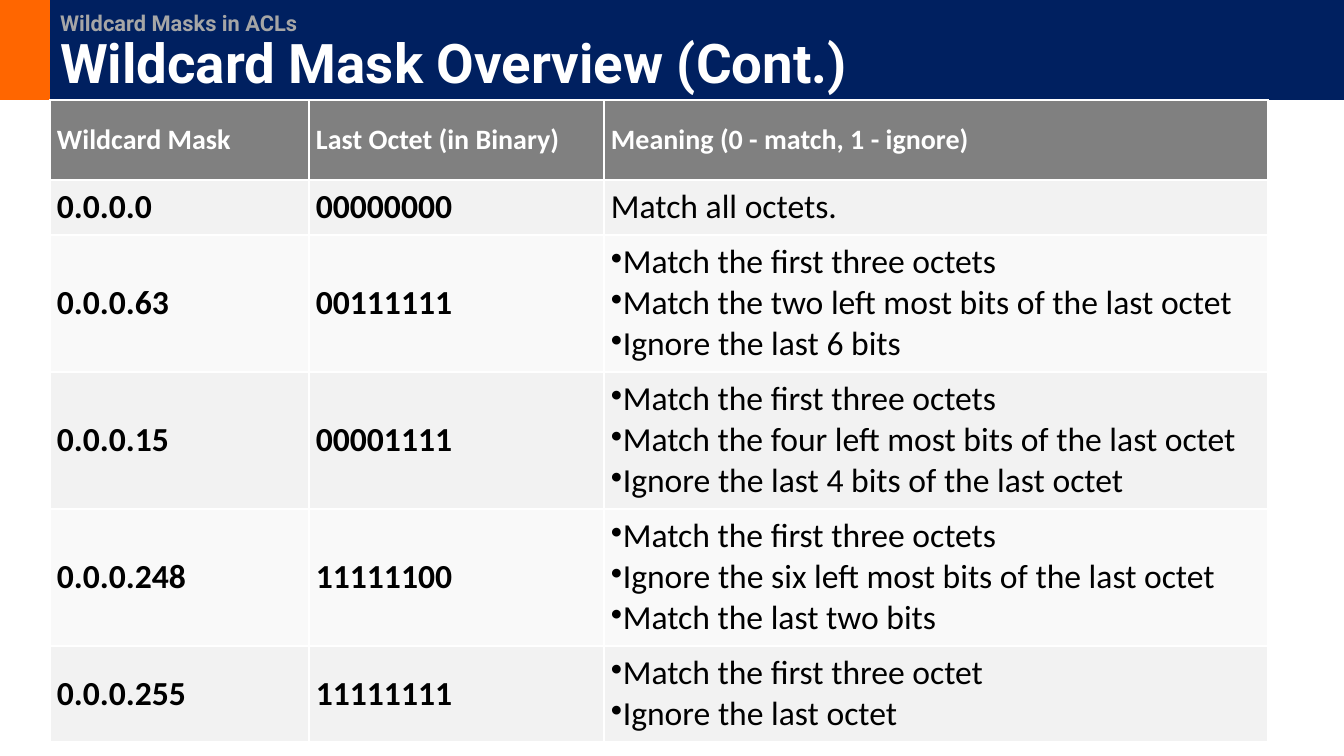
from lxml import etree
from pptx import Presentation
from pptx.dml.color import RGBColor
from pptx.enum.shapes import MSO_SHAPE as Shape
from pptx.enum.text import MSO_ANCHOR as Anchor, MSO_AUTO_SIZE as AutoSize, PP_ALIGN as Align
from pptx.oxml.ns import qn
from pptx.util import Pt

EMU_PER_PX = 914400 / 100.8
COLORS = {
    "orange": "FF6600", "navy": "002060", "topic": "A6A6A6", "white": "FFFFFF",
    "header": "808080", "odd": "F2F2F2", "even": "F9F9F9", "black": "000000",
}
HEADINGS = ["Wildcard Mask", "Last Octet (in Binary)", "Meaning (0 - match, 1 - ignore)"]
MASKS = [
    ("0.0.0.0", "00000000", ["Match all octets."]),
    ("0.0.0.63", "00111111", ["Match the first three octets",
                              "Match the two left most bits of the last octet",
                              "Ignore the last 6 bits"]),
    ("0.0.0.15", "00001111", ["Match the first three octets",
                              "Match the four left most bits of the last octet",
                              "Ignore the last 4 bits of the last octet"]),
    ("0.0.0.248", "11111100", ["Match the first three octets",
                               "Ignore the six left most bits of the last octet",
                               "Match the last two bits"]),
    ("0.0.0.255", "11111111", ["Match the first three octet", "Ignore the last octet"]),
]
COLUMN_WIDTHS = [259, 295, 664]
ROW_HEIGHTS = [80, 55, 137, 137, 137, 96]


def px(length):
    return round(length * EMU_PER_PX)


def style_font(font, name, size, color, bold=True):
    font.name = name
    font.size = Pt(size)
    font.bold = bold
    font.color.rgb = RGBColor.from_string(COLORS[color])


deck = Presentation()
deck.slide_width, deck.slide_height = px(1344), px(756)
page = deck.slides.add_slide(deck.slide_layouts[5])

# Header band
bar = page.shapes.add_shape(Shape.RECTANGLE, 0, 0, px(50), px(100))
bar.shadow.inherit = False
bar.fill.solid()
bar.fill.fore_color.rgb = RGBColor.from_string(COLORS["orange"])
bar.line.fill.background()

title = page.shapes.title
title.left, title.top, title.width, title.height = px(50), 0, px(1294), px(100)
title.fill.solid()
title.fill.fore_color.rgb = RGBColor.from_string(COLORS["navy"])
frame = title.text_frame
frame.auto_size = AutoSize.NONE
frame.word_wrap = True
frame.vertical_anchor = Anchor.BOTTOM
para = frame.paragraphs[0]
para.alignment = Align.LEFT
para.line_spacing = 0.9
style_font(para.font, "Roboto", 15.6, "topic")
topic = para.add_run()
topic.text = "Wildcard Masks in ACLs"
style_font(topic.font, "Roboto", 15.6, "topic")
para.add_line_break()
heading = para.add_run()
heading.text = "Wildcard Mask Overview (Cont.)"
style_font(heading.font, "Roboto", 39, "white")

# Mask table
rows = [[[text] for text in HEADINGS]]
rows += [[[mask], [octet], meaning] for mask, octet, meaning in MASKS]
table = page.shapes.add_table(len(rows), len(HEADINGS), px(50), px(100),
                              px(sum(COLUMN_WIDTHS)), px(sum(ROW_HEIGHTS))).table
for column, width in zip(table.columns, COLUMN_WIDTHS):
    column.width = px(width)
for row, height in zip(table.rows, ROW_HEIGHTS):
    row.height = px(height)

for r, row in enumerate(rows):
    fill = "header" if r == 0 else "odd" if r % 2 else "even"
    size, color = (20, "white") if r == 0 else (24, "black")
    for c, lines in enumerate(row):
        cell = table.cell(r, c)
        cell.fill.solid()
        cell.fill.fore_color.rgb = RGBColor.from_string(COLORS[fill])
        cell.vertical_anchor = Anchor.MIDDLE
        cell.margin_left = cell.margin_right = cell.margin_top = cell.margin_bottom = px(7)
        cell.text_frame.text = "\n".join(lines)
        for para in cell.text_frame.paragraphs:
            style_font(para.font, "Calibri", size, color, bold=r == 0 or c < 2)
            if len(lines) > 1:
                properties = para._p.get_or_add_pPr()
                properties.set("marL", "0")
                properties.set("indent", "0")
                bullet = etree.Element(qn("a:buChar"), char="•")
                properties.insert(0, bullet)

deck.save("out.pptx")
